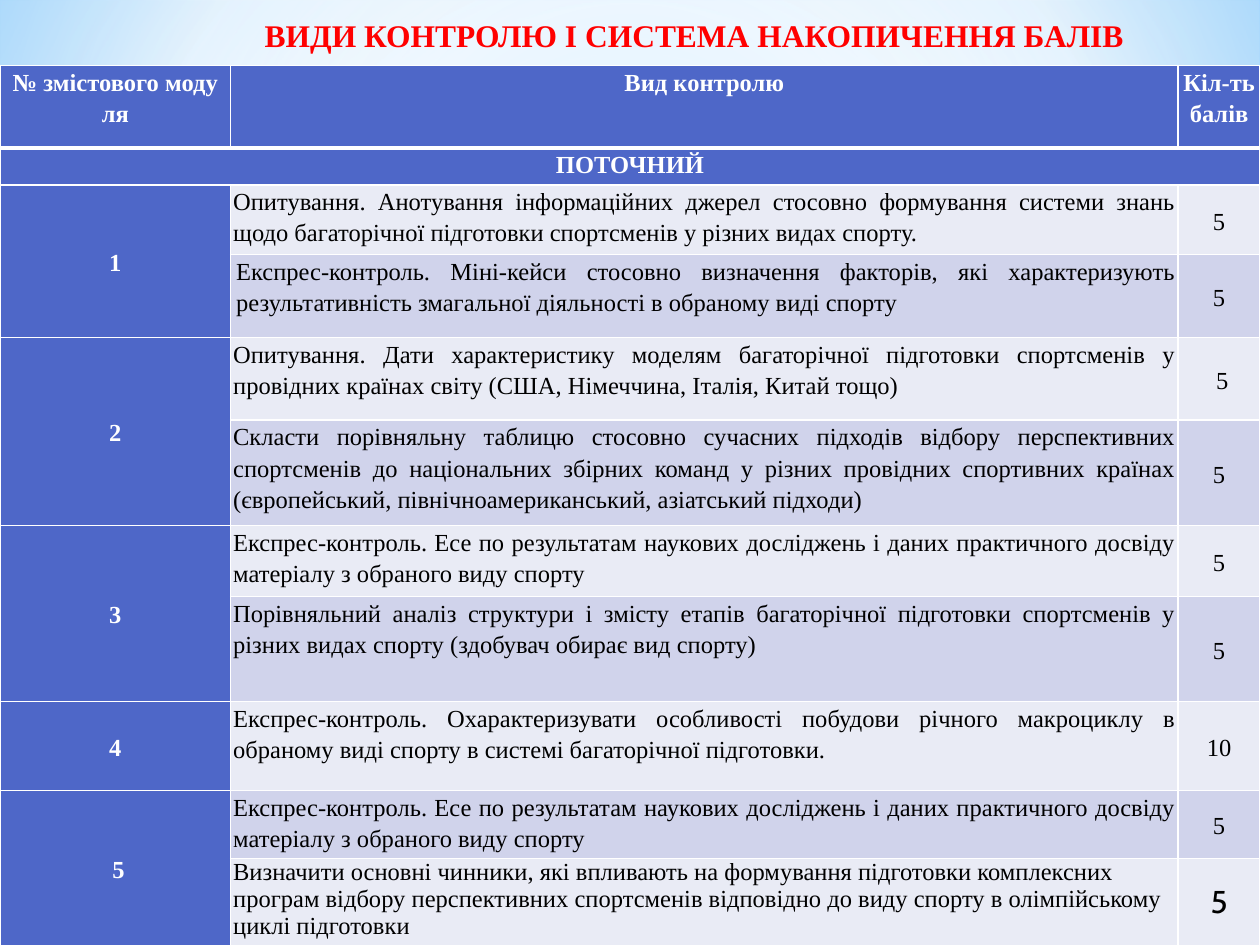
"""Slide with the table of control types and points."""
from lxml import etree
from pptx import Presentation
from pptx.dml.color import RGBColor
from pptx.enum import shapes, text
from pptx.oxml import ns
from pptx.util import Cm, Pt

FONT = "Times New Roman"
BLUE, WHITE, BLACK, RED = "4E67C8", "FFFFFF", "000000", "FF0000"
BANDS = ("E9EBF5", "D0D3EB")
CENTER, JUSTIFY, LEFT = text.PP_ALIGN.CENTER, text.PP_ALIGN.JUSTIFY, text.PP_ALIGN.LEFT

TITLE = "ВИДИ КОНТРОЛЮ І СИСТЕМА НАКОПИЧЕННЯ БАЛІВ"
HEADERS = ("№ змістового моду\nля", "Вид контролю", "Кіл-ть балів")
SECTION = "ПОТОЧНИЙ"
ESSAY = ("Експрес-контроль. Есе по результатам наукових досліджень і даних "
         "практичного досвіду матеріалу з обраного виду спорту")
MODULES = [
    ("1", [("Опитування. Анотування інформаційних джерел стосовно формування системи знань "
            "щодо багаторічної підготовки спортсменів у різних видах спорту.", "5"),
           ("Експрес-контроль. Міні-кейси стосовно визначення факторів, які характеризують "
            "результативність змагальної діяльності в обраному виді спорту", "5")]),
    ("2", [("Опитування. Дати характеристику моделям багаторічної підготовки спортсменів у "
            "провідних країнах світу (США, Німеччина, Італія, Китай тощо)", "5"),
           ("Скласти порівняльну таблицю стосовно сучасних підходів відбору перспективних "
            "спортсменів до національних збірних команд у різних провідних спортивних країнах "
            "(європейський, північноамериканський, азіатський підходи)", "5")]),
    ("3", [(ESSAY, "5"),
           ("Порівняльний аналіз структури і змісту етапів багаторічної підготовки спортсменів у "
            "різних видах спорту (здобувач обирає вид спорту)", "5")]),
    ("4", [("Експрес-контроль. Охарактеризувати особливості побудови річного макроциклу в "
            "обраному виді спорту в системі багаторічної підготовки.", "10")]),
    ("5", [(ESSAY, "5"),
           ("Визначити основні чинники, які впливають на формування підготовки комплексних "
            "програм відбору перспективних спортсменів відповідно до виду спорту в олімпійському "
            "циклі підготовки", "5")]),
]
COLS = (4.65, 19.1, 1.65)
ROWS = (1.66, 0.75, 1.4, 1.67, 1.67, 2.12, 1.44, 2.11, 1.8, 1.36, 1.75)
PAGE_STOPS = [(0, "9ED5FF", 100), (60, WHITE, 100), (100, "5BB9FF", 100)]
GLOW_STOPS = [(0, WHITE, 89), (48, WHITE, 62), (100, "B4DCFA", 79)]


def rgb(value):
    return RGBColor.from_string(value)


def sub(parent, tag, **attrs):
    return etree.SubElement(parent, ns.qn(tag), {k: str(v) for k, v in attrs.items()})


def radial(fill, root, stops, focus):
    fill.gradient()
    grad = next(root.iter(ns.qn("a:gradFill")))
    for child in list(grad):
        grad.remove(child)
    gs_list = sub(grad, "a:gsLst")
    for pos, color, alpha in stops:
        clr = sub(sub(gs_list, "a:gs", pos=pos * 1000), "a:srgbClr", val=color)
        sub(clr, "a:alpha", val=alpha * 1000)
    circle = sub(grad, "a:path", path="circle")
    sub(circle, "a:fillToRect", **{k: v * 1000 for k, v in zip("ltrb", focus)})


def write(tf, content, color, bold, align=CENTER, spacing=1.15, size=14, font=FONT):
    tf.text = content
    for p in tf.paragraphs:
        p.alignment, p.line_spacing = align, spacing
        for r in p.runs:
            r.font.name, r.font.size, r.font.bold = font, Pt(size), bold
            r.font.color.rgb = rgb(color)


def style(cell, fill, top=1, bottom=1):
    cell.margin_left = cell.margin_right = Cm(0.05)
    cell.margin_top = cell.margin_bottom = 0
    cell.fill.solid()
    cell.fill.fore_color.rgb = rgb(fill)
    tc_pr = cell._tc.get_or_add_tcPr()
    for i, (side, width) in enumerate(zip("LRTB", (1, 1, top, bottom))):
        ln = sub(tc_pr, f"a:ln{side}", w=Pt(width))
        sub(sub(ln, "a:solidFill"), "a:srgbClr", val=WHITE)
        tc_pr.insert(i, ln)


def add_title(s):
    tf = s.shapes.add_textbox(Cm(4.9), Cm(0.2), Cm(18.2), Cm(1.02)).text_frame
    tf.word_wrap = True
    write(tf, TITLE, RED, True, spacing=1, size=18)


def add_table(s):
    shape = s.shapes.add_table(len(ROWS), len(COLS), 0, Cm(1.32), Cm(sum(COLS)), Cm(sum(ROWS)))
    table = shape.table
    for col, width in zip(table.columns, COLS):
        col.width = Cm(width)
    for row, height in zip(table.rows, ROWS):
        row.height = Cm(height)

    for c, header in enumerate(HEADERS):
        style(table.cell(0, c), BLUE, bottom=3)
        write(table.cell(0, c).text_frame, header, WHITE, True)
        style(table.cell(1, c), BLUE, top=3)
    table.cell(1, 0).merge(table.cell(1, 2))
    write(table.cell(1, 0).text_frame, SECTION, WHITE, True)

    first = 2
    for number, tasks in MODULES:
        for r, (task, points) in enumerate(tasks, first):
            for c, fill in enumerate((BLUE, BANDS[r % 2], BANDS[r % 2])):
                style(table.cell(r, c), fill)
            write(table.cell(r, 1).text_frame, task, BLACK, False, JUSTIFY)
            write(table.cell(r, 2).text_frame, points, BLACK, False)
            table.cell(r, 2).vertical_anchor = text.MSO_ANCHOR.MIDDLE
        module = table.cell(first, 0)
        if len(tasks) > 1:
            module.merge(table.cell(first + len(tasks) - 1, 0))
        write(module.text_frame, number, WHITE, True)
        module.vertical_anchor = text.MSO_ANCHOR.MIDDLE
        first += len(tasks)

    last = len(ROWS) - 1
    task, points = MODULES[-1][1][-1]
    write(table.cell(last, 1).text_frame, task, BLACK, False, LEFT, 1)
    write(table.cell(last, 2).text_frame, points, BLACK, False, CENTER, 1, 18, "Cabin")
    for r, c, left in ((3, 1, 0.11), (4, 2, 0.18), (9, 0, 0.18)):
        table.cell(r, c).margin_left = Cm(left)


def main():
    prs = Presentation()
    prs.slide_width, prs.slide_height = Cm(25.4), Cm(19.05)
    s = prs.slides.add_slide(prs.slide_layouts[6])
    radial(s.background.fill, s._element, PAGE_STOPS, (20, 10, 20, 60))
    glow = s.shapes.add_shape(shapes.MSO_SHAPE.RECTANGLE, 0, 0, prs.slide_width, Cm(14.17))
    glow.shadow.inherit = False
    glow.line.fill.background()
    radial(glow.fill, glow._element, GLOW_STOPS, (50, 50, 50, 50))
    add_title(s)
    add_table(s)
    prs.save("out.pptx")


if __name__ == "__main__":
    main()
